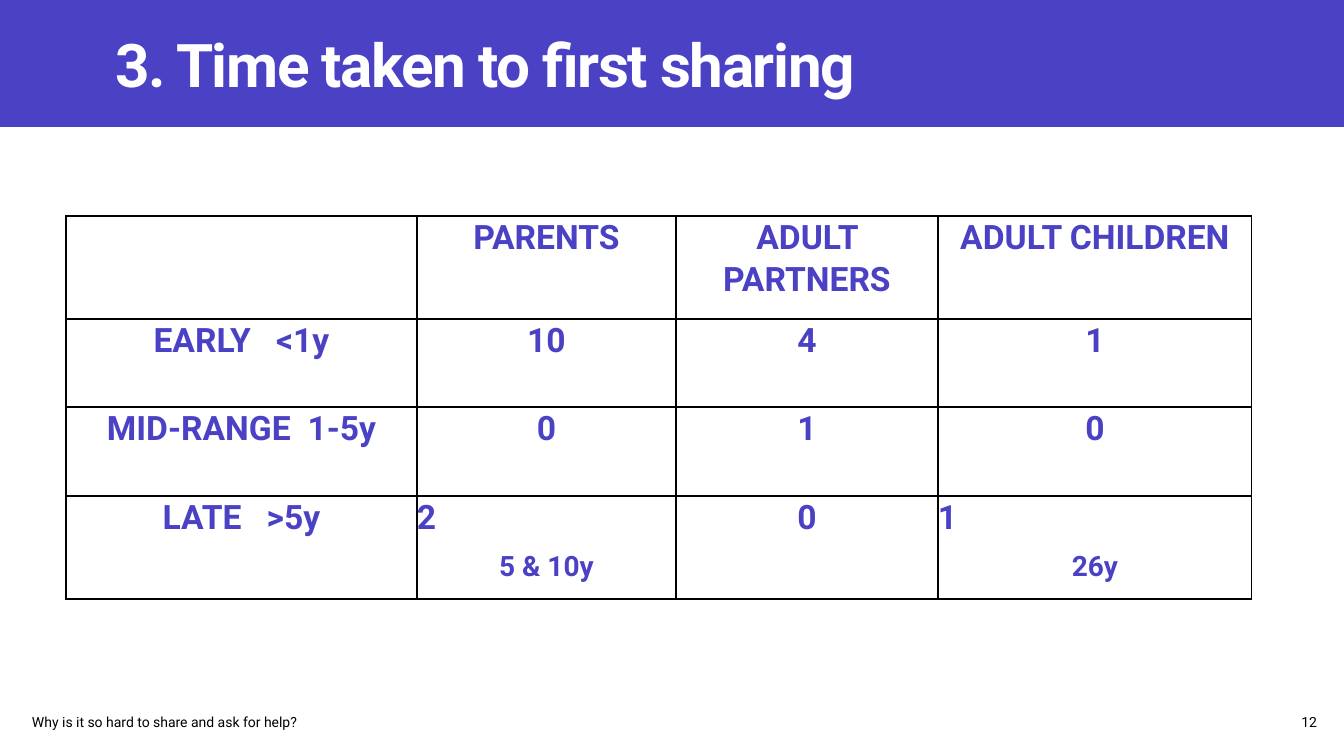
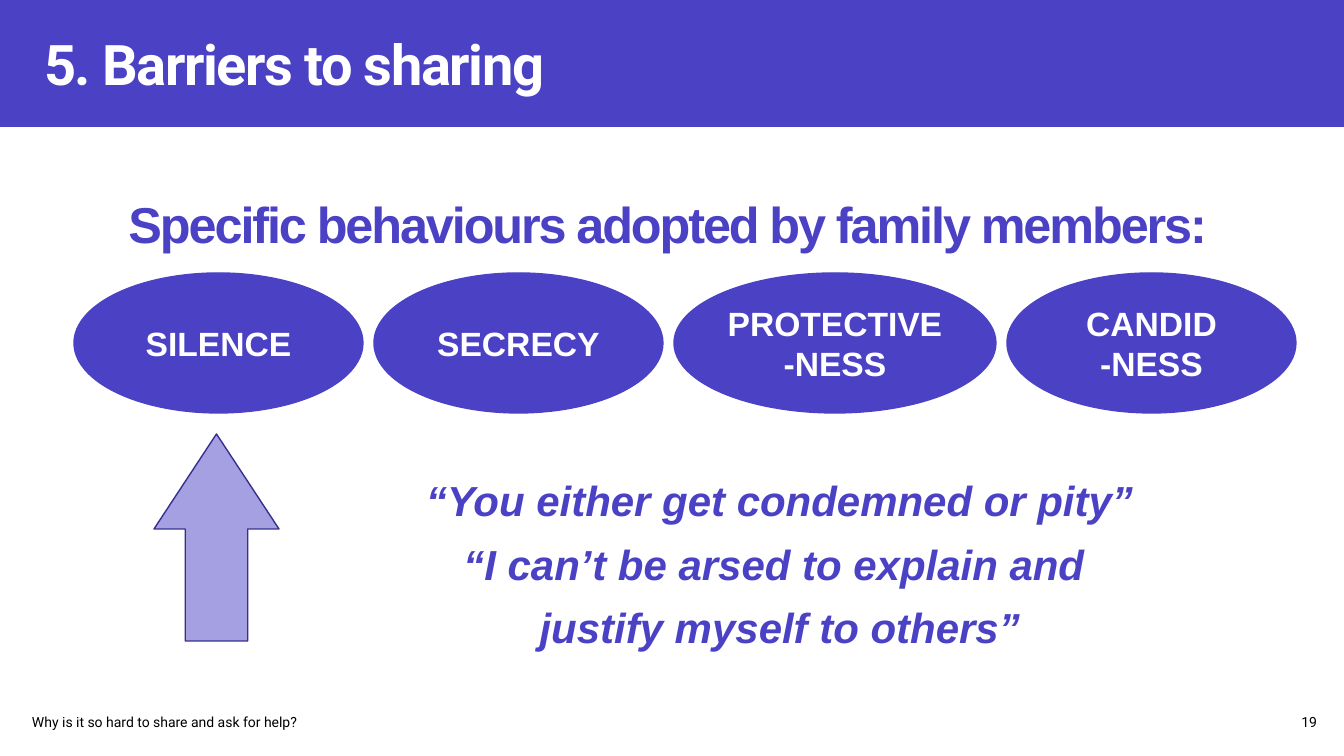
import lxml.etree
import pptx
import pptx.dml.color
import pptx.enum.shapes
import pptx.enum.text
import pptx.oxml.ns
import pptx.util

RGBColor = pptx.dml.color.RGBColor
INDIGO = RGBColor(0x4A, 0x41, 0xC5)
LILAC = RGBColor(0xA4, 0xA0, 0xE2)
DEEP_INDIGO = RGBColor(0x36, 0x2F, 0x90)
WHITE = RGBColor(0xFF, 0xFF, 0xFF)
BLACK = RGBColor(0x00, 0x00, 0x00)

ROBOTO, ARIAL = "Roboto", "Arial"
CENTER = pptx.enum.text.PP_ALIGN.CENTER
LEFT = pptx.enum.text.PP_ALIGN.LEFT
RIGHT = pptx.enum.text.PP_ALIGN.RIGHT
MIDDLE = pptx.enum.text.MSO_ANCHOR.MIDDLE
SHAPES = pptx.enum.shapes.MSO_SHAPE

SLIDE_W, SLIDE_H = 1344, 756
BAND_H = 127
INSET = 5
FOOTER_TOP, FOOTER_H = 708, 27
FOOTER = "Why is it so hard to share and ask for help?"


def px(length):
    return pptx.util.Emu(round(length * 914400 / 100.8))


def set_insets(holder, inset):
    """Set equal margins on a text frame or a table cell."""
    holder.margin_left = holder.margin_right = px(inset)
    holder.margin_top = holder.margin_bottom = px(inset)


def style_run(run, size, color, font=ROBOTO, bold=True, italic=False, spacing=0):
    """Format a run; spacing is the tracking in points."""
    run.font.name = font
    run.font.size = pptx.util.Pt(size)
    run.font.color.rgb = color
    run.font.bold = bold
    run.font.italic = italic
    if spacing:
        run.font._element.set("spc", str(round(spacing * 100)))


def fill_frame(frame, text, align, gap=0, wrap=True, **style):
    """Write one paragraph per line, gap points apart, centred vertically."""
    frame.text = text
    frame.word_wrap = wrap
    frame.vertical_anchor = MIDDLE
    set_insets(frame, INSET)
    for index, paragraph in enumerate(frame.paragraphs):
        paragraph.alignment = align
        if index and gap:
            paragraph.space_before = pptx.util.Pt(gap)
        for run in paragraph.runs:
            style_run(run, **style)


def add_text(slide, box, text, align=LEFT, **style):
    textbox = slide.shapes.add_textbox(*map(px, box))
    fill_frame(textbox.text_frame, text, align, **style)


def add_figure(slide, preset, box, fill, line=None):
    figure = slide.shapes.add_shape(preset, *map(px, box))
    figure.shadow.inherit = False
    figure.fill.solid()
    figure.fill.fore_color.rgb = fill
    if line is None:
        figure.line.fill.background()
    else:
        figure.line.color.rgb = line
        figure.line.width = pptx.util.Pt(1)
    return figure


def add_framed_slide(deck, title, title_left, title_size, number):
    """Add a slide with the title band, footer and page number."""
    slide = deck.slides.add_slide(deck.slide_layouts[6])
    add_figure(slide, SHAPES.RECTANGLE, (0, 0, SLIDE_W, BAND_H), INDIGO)
    title_box = (title_left, 21, SLIDE_W - 2 * title_left, 84)
    add_text(slide, title_box, title, size=title_size, color=WHITE, spacing=-1)
    small = dict(size=10, color=BLACK, bold=False)
    add_text(slide, (27, FOOTER_TOP, 523, FOOTER_H), FOOTER, **small)
    add_text(slide, (1295, FOOTER_TOP, 27, FOOTER_H), str(number),
             align=RIGHT, wrap=False, **small)
    return slide


def outline_cell(cell):
    properties = cell._tc.get_or_add_tcPr()
    qn = pptx.oxml.ns.qn
    for side in ("a:lnL", "a:lnR", "a:lnT", "a:lnB"):
        line = lxml.etree.SubElement(properties, qn(side), w="12700")
        fill = lxml.etree.SubElement(line, qn("a:solidFill"))
        lxml.etree.SubElement(fill, qn("a:srgbClr"), val=str(BLACK))


def add_cell_line(paragraph, parts, align=CENTER):
    """Add runs given as (text, size, tracking) to a table paragraph."""
    paragraph.alignment = align
    paragraph.line_spacing = 1.06
    for text, size, spacing in parts:
        run = paragraph.add_run()
        run.text = text
        style_run(run, size, INDIGO, spacing=spacing)


def fill_cell(cell, content):
    """Write a text, a (name, gap, range) label or a (count, detail) pair."""
    first = cell.text_frame.paragraphs[0]
    if isinstance(content, str):
        add_cell_line(first, [(content, 24, 0)])
    elif len(content) == 3:
        name, gap, years = content
        add_cell_line(first, [(name, 24, 0), (" ", 24, gap), (years, 24, 0)])
    else:
        count, detail = content
        add_cell_line(first, [(count, 24, 0)], LEFT)
        second = cell.text_frame.add_paragraph()
        second.space_before = pptx.util.Pt(8)
        add_cell_line(second, [(detail, 20, 0)])


def add_sharing_table(slide, left, top, widths, heights, rows):
    table = slide.shapes.add_table(
        len(heights), len(widths), px(left), px(top),
        px(sum(widths)), px(sum(heights))).table
    table.first_row = table.horz_banding = False
    for column, width in zip(table.columns, widths):
        column.width = px(width)
    for row, height, contents in zip(table.rows, heights, rows):
        row.height = px(height)
        for cell, content in zip(row.cells, contents):
            set_insets(cell, 0)
            outline_cell(cell)
            cell.fill.background()
            if content:
                fill_cell(cell, content)


def build_time_slide(deck):
    slide = add_framed_slide(deck, "3. Time taken to first sharing", 110, 43, 12)
    rows = [
        ("", "PARENTS", "ADULT PARTNERS", "ADULT CHILDREN"),
        (("EARLY", 12, "<1y"), "10", "4", "1"),
        (("MID-RANGE", 6, "1-5y"), "0", "1", "0"),
        (("LATE", 12, ">5y"), ("2", "5 & 10y"), "0", ("1", "26y")),
    ]
    add_sharing_table(slide, 66, 216, (351, 259, 262, 314),
                      (103, 88, 89, 103), rows)


def add_behaviours(slide, left, top, height, gap, behaviours):
    """Lay a row of labelled ellipses from left to right."""
    for label, width in behaviours:
        ellipse = add_figure(slide, SHAPES.OVAL, (left, top, width, height),
                             INDIGO, INDIGO)
        fill_frame(ellipse.text_frame, label, CENTER,
                   size=24, color=WHITE, font=ARIAL)
        left += width + gap


def add_up_arrow(slide, left, top, width, height, head):
    arrow = add_figure(slide, SHAPES.UP_ARROW, (left, top, width, height),
                       LILAC, DEEP_INDIGO)
    arrow.adjustments[0] = 0.5
    arrow.adjustments[1] = head / width


def build_barriers_slide(deck):
    slide = add_framed_slide(deck, "5. Barriers to sharing", 39, 40, 19)
    add_text(slide, (67, 189, 1202, 68),
             "Specific behaviours adopted by family members:", align=CENTER,
             size=36, color=INDIGO, font=ARIAL, spacing=-1.5)
    quotes = ("“You either get condemned or pity”\n"
              "“I can’t be arsed to explain and \n"
              "justify myself to others”")
    add_text(slide, (262, 471, 1036, 185), quotes, align=CENTER, gap=9.5,
             size=30, color=INDIGO, font=ARIAL, italic=True)
    add_up_arrow(slide, 154, 434, 125, 207, head=95)
    add_behaviours(slide, 74, 273, 140, 11, [
        ("SILENCE", 289), ("SECRECY", 289),
        ("PROTECTIVE\n-NESS", 322), ("CANDID\n-NESS", 289)])


def main():
    deck = pptx.Presentation()
    deck.slide_width, deck.slide_height = px(SLIDE_W), px(SLIDE_H)
    build_time_slide(deck)
    build_barriers_slide(deck)
    deck.save("out.pptx")


if __name__ == "__main__":
    main()
